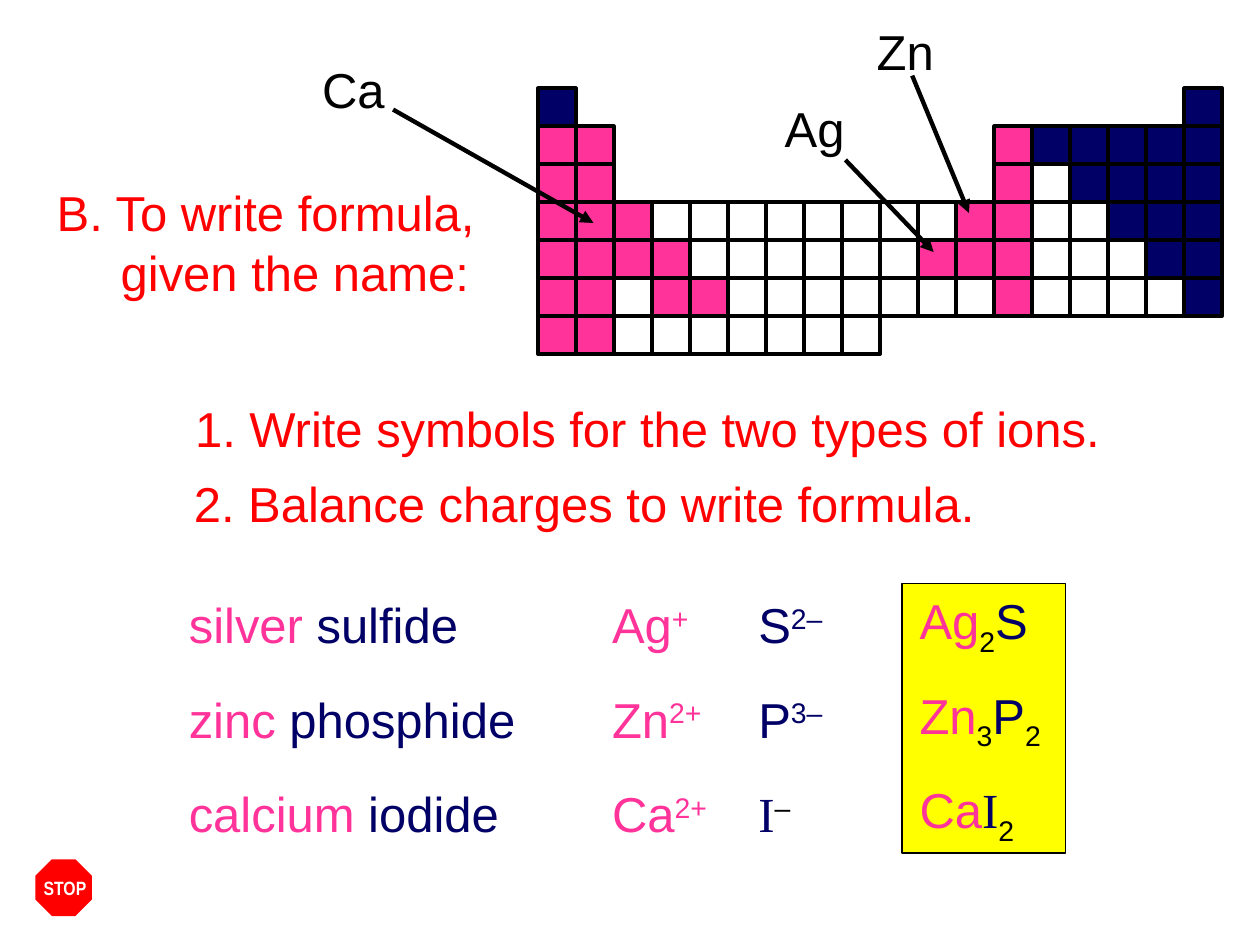
from pptx import Presentation
from pptx.dml.color import RGBColor
from pptx.enum.shapes import MSO_CONNECTOR, MSO_SHAPE
from pptx.enum.text import MSO_ANCHOR, MSO_AUTO_SIZE, PP_ALIGN
from pptx.oxml.ns import qn
from pptx.util import Inches, Pt
from lxml import etree

LEFT, CENTER = PP_ALIGN.LEFT, PP_ALIGN.CENTER
MIDDLE = MSO_ANCHOR.MIDDLE
NO_AUTOFIT = MSO_AUTO_SIZE.NONE
FIT_SHAPE = MSO_AUTO_SIZE.SHAPE_TO_FIT_TEXT
RECTANGLE, OCTAGON = MSO_SHAPE.RECTANGLE, MSO_SHAPE.OCTAGON
STRAIGHT = MSO_CONNECTOR.STRAIGHT

PINK, NAVY, RED, YELLOW = "FF3399", "000066", "FF0000", "FFFF00"
BLACK, WHITE = "000000", "FFFFFF"
SANS, NARROW, SERIF = "Arial", "Arial Narrow", "Times New Roman"
SUPER, SUB = 30, -25
LINE_HEIGHT = 0.57

# M: metal with one charge, N: nonmetal, o: other element, .: no element
PERIODS = [
    "N................N",
    "MM..........MNNNNN",
    "MM..........MoNNNN",
    "MMMooooooooMMooNNN",
    "MMMMooooooMMMoooNN",
    "MMoMMoooooooMooooN",
    "MMooooooo",
]
CELL_FILLS = {"M": PINK, "N": NAVY, "o": None}
TABLE_LEFT, TABLE_TOP = 4.27, 0.7
CELL = 5.43 / 18

# Element label: left, top, arrow start, arrow end
CALLOUTS = [
    ("Ca", 2.43, 0.42, (3.12, 0.87), (4.71, 1.77)),
    ("Ag", 6.09, 0.73, (6.71, 1.27), (7.41, 2)),
    ("Zn", 6.81, 0.12, (7.24, 0.6), (7.69, 1.69)),
]

# Each compound: name, cation, anion, formula, as (width, runs);
# a run is (text, colour, baseline shift, font), the last two optional
COMPOUND_COLUMNS = [1.4, 4.76, 5.92, 7.2]
COMPOUND_TOP, COMPOUND_STEP = 4.67, 0.75
COMPOUNDS = [
    [(2.35, [("silver ", PINK), ("sulfide", NAVY)]),
     (0.94, [("Ag", PINK), ("+", PINK, SUPER)]),
     (0.86, [("S", NAVY), ("2–", NAVY, SUPER)]),
     (1.19, [("Ag", PINK), ("2", BLACK, SUB), ("S", NAVY)])],
    [(2.8, [("zinc ", PINK), ("phosphide", NAVY)]),
     (1.07, [("Zn", PINK), ("2+", PINK, SUPER)]),
     (0.86, [("P", NAVY), ("3–", NAVY, SUPER)]),
     (1.32, [("Zn", PINK), ("3", BLACK, SUB), ("P", NAVY), ("2", BLACK, SUB)])],
    [(2.67, [("calcium ", PINK), ("iodide", NAVY)]),
     (1.11, [("Ca", PINK), ("2+", PINK, SUPER)]),
     (0.59, [("I", NAVY, 0, SERIF), ("–", BLACK, SUPER)]),
     (1.09, [("Ca", PINK), ("I", NAVY, 0, SERIF), ("2", BLACK, SUB)])],
]


def color(value):
    return RGBColor.from_string(value)


class SlideBuilder:
    def __init__(self, slide):
        self.slide = slide
        self.size = 28

    def box(self, left, top, width, height, fill=None, line=None,
            line_width=2, kind=RECTANGLE, parent=None):
        shapes = (parent or self.slide).shapes
        shape = shapes.add_shape(kind, Inches(left), Inches(top),
                                 Inches(width), Inches(height))
        shape.shadow.inherit = False
        if fill:
            shape.fill.solid()
            shape.fill.fore_color.rgb = color(fill)
        else:
            shape.fill.background()
        if line:
            shape.line.color.rgb = color(line)
            shape.line.width = Pt(line_width)
        else:
            shape.line.fill.background()

    def add_run(self, paragraph, text, text_color, shift=0, font=SANS):
        run = paragraph.add_run()
        run.text = text
        run.font.name = font
        run.font.size = Pt(self.size)
        run.font.color.rgb = color(text_color)
        if shift:
            run.font._element.set("baseline", str(shift * 1000))
        return run

    def fill_text(self, shape, runs, align=LEFT, wrap=False, fit=FIT_SHAPE):
        frame = shape.text_frame
        frame.word_wrap = wrap
        frame.auto_size = fit
        frame.vertical_anchor = MIDDLE
        paragraph = frame.paragraphs[0]
        paragraph.alignment = align
        return [self.add_run(paragraph, *run) for run in runs]

    def text(self, left, top, width, runs, height=LINE_HEIGHT, **layout):
        shape = self.slide.shapes.add_textbox(
            Inches(left), Inches(top), Inches(width), Inches(height))
        return self.fill_text(shape, runs, **layout)

    def title(self, left, top, width, text):
        title = self.slide.shapes.title
        title.left, title.top = Inches(left), Inches(top)
        title.width, title.height = Inches(width), Inches(LINE_HEIGHT)
        self.fill_text(title, [(text, RED)], fit=NO_AUTOFIT)

    def arrow(self, start, end):
        connector = self.slide.shapes.add_connector(
            STRAIGHT, *(Inches(value) for value in start + end))
        connector.line.color.rgb = color(BLACK)
        connector.line.width = Pt(2.5)
        line = connector.line._get_or_add_ln()
        etree.SubElement(line, qn("a:tailEnd"), type="triangle")
        etree.SubElement(line.getparent(), qn("a:effectLst"))

    def periodic_table(self):
        group = self.slide.shapes.add_group_shape()
        for row, period in enumerate(PERIODS):
            for column, element in enumerate(period):
                if element in CELL_FILLS:
                    self.box(TABLE_LEFT + column * CELL, TABLE_TOP + row * CELL,
                             CELL, CELL, CELL_FILLS[element], BLACK, parent=group)

    def stop_sign(self):
        self.box(0.28, 6.82, 0.45, 0.45, RED, kind=OCTAGON)
        label, = self.text(0.24, 6.9, 0.55, [("STOP", WHITE, 0, NARROW)],
                           height=0.29, align=CENTER)
        label.font.size = Pt(11)
        label.font.bold = True


def main():
    presentation = Presentation()
    presentation.slide_width = Inches(10)
    presentation.slide_height = Inches(7.5)
    title_only = presentation.slide_layouts[5]
    builder = SlideBuilder(presentation.slides.add_slide(title_only))

    builder.title(0.35, 1.4, 3.68, "B. To write formula,")
    builder.text(0.86, 1.87, 2.97, [("given the name:", RED)])
    builder.periodic_table()

    builder.text(1.45, 3.11, 7.4,
                 [("1. Write symbols for the two types of ions.", RED)])
    builder.text(1.44, 3.71, 6.41,
                 [("2. Balance charges to write formula.", RED)])

    builder.box(7.16, 4.63, 1.3, 2.14, YELLOW, BLACK, 0.75)
    for row, compound in enumerate(COMPOUNDS):
        top = COMPOUND_TOP + row * COMPOUND_STEP
        for left, (width, runs) in zip(COMPOUND_COLUMNS, compound):
            builder.text(left, top, width, runs)

    for symbol, left, top, start, end in CALLOUTS:
        builder.arrow(start, end)
        builder.text(left, top, 0.75, [(symbol, BLACK)], align=CENTER, wrap=True)

    builder.stop_sign()
    presentation.save("out.pptx")


if __name__ == "__main__":
    main()
